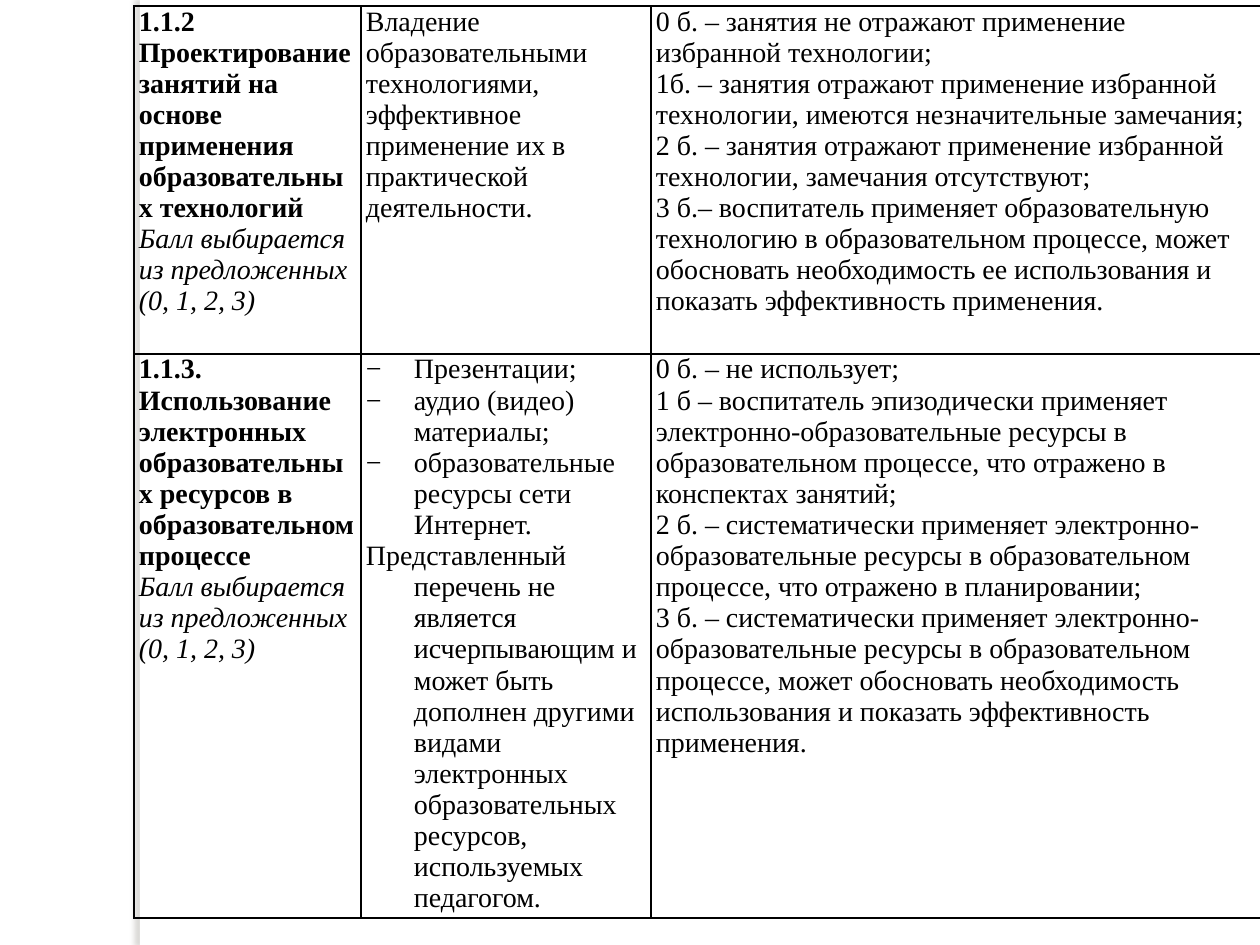
from lxml.etree import SubElement
from pptx import Presentation
from pptx.dml.color import RGBColor
from pptx.enum.shapes import MSO_SHAPE as Shape
from pptx.enum.text import MSO_ANCHOR as Anchor
from pptx.oxml.ns import qn
from pptx.util import Emu, Pt

SCALE = 914400 / 126
FONT = {"name": "Times New Roman", "size": Pt(16)}
BOLD, ITALIC, PLAIN, HANGING, DASH = "bold", "italic", "plain", "hanging", "dash"
COLUMNS = (227, 290, 610)
ROWS = (348, 564)
SCORE = (ITALIC, "Балл выбирается из предложенных (0, 1, 2, 3)")

CRITERIA = [
    [
        [(BOLD, "1.1.2 Проектирование занятий на основе применения образовательных технологий"), SCORE],
        [(PLAIN, "Владение образовательными технологиями, эффективное применение их в "
                 "практической деятельности.")],
        [(PLAIN, "0 б. – занятия не отражают применение избранной технологии;"),
         (PLAIN, "1б. – занятия отражают применение избранной технологии, имеются "
                 "незначительные замечания;"),
         (PLAIN, "2 б. – занятия отражают применение избранной технологии, замечания отсутствуют;"),
         (PLAIN, "3 б.– воспитатель применяет образовательную технологию в образовательном "
                 "процессе, может обосновать необходимость ее использования и показать "
                 "эффективность применения.")],
    ],
    [
        [(BOLD, "1.1.3. Использование электронных образовательных ресурсов в "
                "образовательном процессе"), SCORE],
        [(DASH, "Презентации;"),
         (DASH, "аудио (видео) материалы;"),
         (DASH, "образовательные ресурсы сети Интернет."),
         (HANGING, "Представленный перечень не является исчерпывающим и может быть дополнен "
                   "другими видами электронных образовательных ресурсов, используемых педагогом.")],
        [(PLAIN, "0 б. – не использует;"),
         (PLAIN, "1 б – воспитатель эпизодически применяет электронно-образовательные ресурсы "
                 "в образовательном процессе, что отражено в конспектах занятий;"),
         (PLAIN, "2 б. – систематически применяет электронно-образовательные ресурсы в "
                 "образовательном процессе, что отражено в планировании;"),
         (PLAIN, "3 б. – систематически применяет электронно-образовательные ресурсы в "
                 "образовательном процессе, может обосновать необходимость использования и "
                 "показать эффективность применения.")],
    ],
]


def px(length):
    """Turn whole pixels into EMU."""
    return Emu(round(length * SCALE))


def color(value):
    """Turn a hex string into a colour."""
    return RGBColor.from_string(value)


def assign(target, values):
    """Set each named attribute on the target."""
    for name, value in values.items():
        setattr(target, name, value)


def add_strip(page):
    """Add the white side strip with a soft shadow to its left."""
    strip = page.shapes.add_shape(Shape.RECTANGLE, px(140), px(0), px(10), px(945))
    strip.fill.solid()
    strip.fill.fore_color.rgb = color("FFFFFF")
    strip.line.fill.background()
    strip.shadow.inherit = False
    effects = strip._element.spPr.find(qn("a:effectLst"))
    shadow = SubElement(effects, qn("a:outerShdw"), blurRad=str(Pt(3)), dist=str(Pt(3)),
                        dir="10800000", algn="ctr", rotWithShape="0")
    tint = SubElement(shadow, qn("a:srgbClr"), val="736F63")
    SubElement(tint, qn("a:alpha"), val="25000")


def add_borders(cell):
    """Draw thin black lines on all four sides of a cell."""
    properties = cell._tc.get_or_add_tcPr()
    for side in ("lnL", "lnR", "lnT", "lnB"):
        line = SubElement(properties, qn(f"a:{side}"), w=str(Pt(1)))
        fill = SubElement(line, qn("a:solidFill"))
        SubElement(fill, qn("a:srgbClr"), val="000000")


def indent(para, dashed):
    """Give a paragraph a hanging indent, with a dash if wanted."""
    properties = para._p.get_or_add_pPr()
    properties.set("marL", str(px(48)))
    properties.set("indent", str(px(-48)))
    if dashed:
        SubElement(properties, qn("a:buFont"), typeface=FONT["name"])
        SubElement(properties, qn("a:buChar"), char="−")


def write_para(para, style, text):
    """Write one styled paragraph."""
    if style in (HANGING, DASH):
        indent(para, style == DASH)
    span = para.add_run()
    span.text = text
    assign(span.font, {**FONT, "bold": style == BOLD, "italic": style == ITALIC})
    span.font.color.rgb = color("000000")


def fill_cell(cell, lines):
    """Format a cell and write its paragraphs."""
    assign(cell, {"margin_left": px(5), "margin_right": px(5), "margin_top": 0,
                  "margin_bottom": 0, "vertical_anchor": Anchor.TOP})
    add_borders(cell)
    cell.fill.background()
    frame = cell.text_frame
    for index, (style, text) in enumerate(lines):
        para = frame.add_paragraph() if index else frame.paragraphs[0]
        write_para(para, style, text)


def add_criteria(page):
    """Add the table of criteria and scores."""
    table = page.shapes.add_table(len(ROWS), len(COLUMNS), px(134), px(6),
                                  px(sum(COLUMNS)), px(sum(ROWS))).table
    assign(table, {"first_row": False, "horz_banding": False})
    for column, width in zip(table.columns, COLUMNS):
        column.width = px(width)
    for row, height, contents in zip(table.rows, ROWS, CRITERIA):
        row.height = px(height)
        for cell, lines in zip(row.cells, contents):
            fill_cell(cell, lines)


def main():
    """Build and save the slide."""
    deck = Presentation()
    assign(deck, {"slide_width": px(1260), "slide_height": px(945)})
    page = deck.slides.add_slide(deck.slide_layouts[6])
    add_strip(page)
    add_criteria(page)
    deck.save("out.pptx")


if __name__ == "__main__":
    main()
